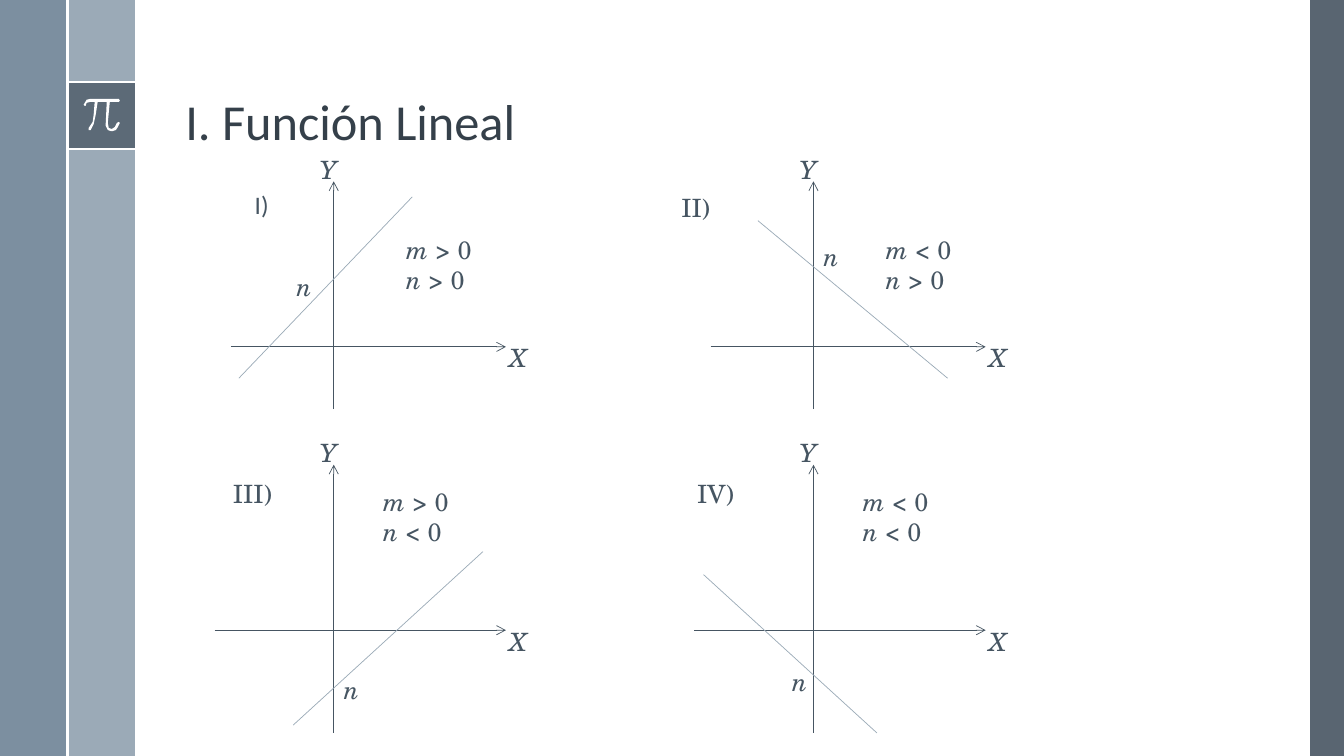
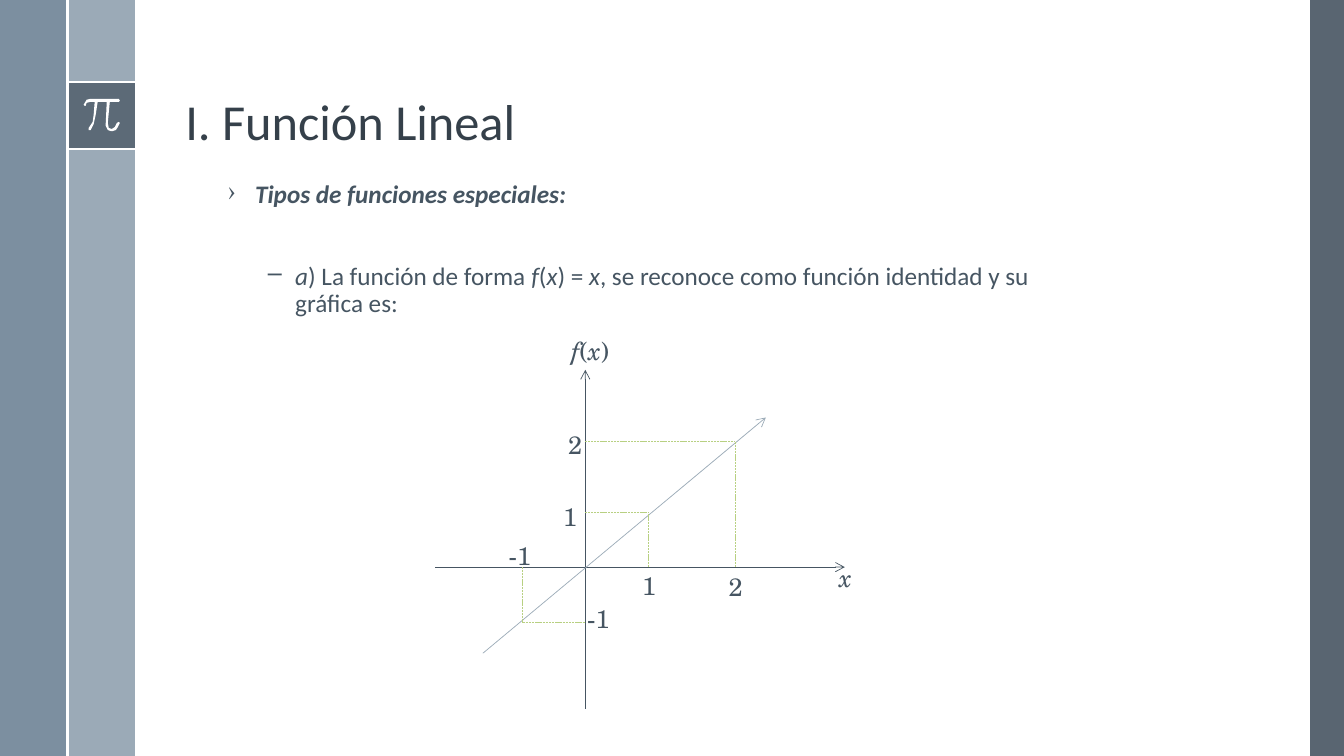
import pptx
import pptx.util
import pptx.dml.color
import pptx.enum.dml
import pptx.enum.shapes
import pptx.enum.text
import pptx.oxml.ns
import lxml.etree

Cm = pptx.util.Cm
Pt = pptx.util.Pt
RGBColor = pptx.dml.color.RGBColor
qn = pptx.oxml.ns.qn

WHITE = RGBColor(0xFF, 0xFF, 0xFF)
SLATE = RGBColor(0x47, 0x55, 0x62)
STEEL = RGBColor(0x6A, 0x80, 0x93)
MIST = RGBColor(0x9B, 0xAA, 0xB7)
INK = RGBColor(0x46, 0x55, 0x62)
TITLE_INK = RGBColor(0x35, 0x40, 0x4A)
GUIDE = RGBColor(0xB8, 0xD0, 0x82)

SANS = "Calibri"
SERIF = "TeX Gyre Schola"
WIDTH, HEIGHT = 33.87, 19.05
TITLE = "I. Función Lineal"

BANDS = [
    ((33.02, 0, 0.85, HEIGHT), SLATE, 90),
    ((1.7, 0, 1.7, HEIGHT), MIST, 100),
    ((0, 0, 1.7, HEIGHT), STEEL, 88),
    ((1.7, 2.06, 1.7, 1.7), SLATE, 75),
]
BAND_RULES = [
    ((1.7, 2.06), (3.4, 2.06)),
    ((1.7, 3.75), (3.4, 3.75)),
    ((1.7, 0), (1.7, HEIGHT)),
]
PI_UNIT = Cm(2.54) / 100
PI_OUTLINE = [
    (118, 98), (90, 98), (86.5, 99.3), (83.3, 103.5), (84, 105), (85, 105),
    (86.5, 102.5), (90, 101), (94, 101), (93, 113.6), (91.5, 121), (88, 127),
    (88, 129), (90, 129), (93, 123), (95, 114.3), (97, 101), (106, 101),
    (105, 122), (105, 125), (107, 129), (110, 130), (112, 130), (115, 129),
    (117.4, 126.4), (119, 122), (118, 121), (116, 122), (114.4, 126),
    (111, 128), (108, 127), (107, 122), (109, 101), (118, 101), (119, 100),
]

COLUMNS = [8.41, 20.5]
ROWS = [
    {"y": 8.74, "left": -2.59, "bottom": 1.57, "signs": (1.57, -2.97)},
    {"y": 15.88, "left": -3, "bottom": 2.59, "signs": (0.99, -3.76)},
]
AXIS_RIGHT, AXIS_TOP = 4.34, -4.17
CASES = [
    {"name": "I)", "font": SANS, "name_at": (-2.24, -4.09),
     "line": ((-2.39, 0.79), (1.98, -3.78)), "n_at": (-1.19, -2.03),
     "signs": ["*m* > 0", "*n* > 0"]},
    {"name": "II)", "font": SERIF, "name_at": (-3.58, -4.01),
     "line": ((-1.4, -3.18), (3.38, 0.79)), "n_at": (0, -2.79),
     "signs": ["*m* < 0", "*n* > 0"]},
    {"name": "III)", "font": SERIF, "name_at": (-2.79, -3.96),
     "line": ((-1.02, 2.39), (3.76, -1.98)), "n_at": (0, 0.99),
     "signs": ["*m* > 0", "*n* < 0"]},
    {"name": "IV)", "font": SERIF, "name_at": (-3.18, -3.96),
     "line": ((-2.77, -1.4), (1.6, 2.59)), "n_at": (-0.79, 0.79),
     "signs": ["*m* < 0", "*n* < 0"]},
]

HEADING = "Tipos de funciones especiales:"
STATEMENT = ("*a*) La función de forma *f*(*x*) = *x*, "
             "se reconoce como función identidad y su gráfica es:")
ORIGIN = (14.75, 14.29)
IDENTITY_LINES = [
    ((10.97, ORIGIN[1]), (21.29, ORIGIN[1]), INK),
    ((ORIGIN[0], 17.86), (ORIGIN[0], 9.32), INK),
    ((12.17, 16.46), (19.3, 10.52), MIST),
]
GUIDE_POINTS = [(16.33, 12.9), (18.52, 11.13), (13.16, 15.67)]
IDENTITY_LABELS = [
    ("1", 13.94, 12.5, 0.79),
    ("2", 14.07, 10.69, 0.86),
    ("1", 15.93, 14.25, 0.79),
    ("2", 18.11, 14.27, 0.99),
    ("-1", 14.55, 15.09, 1.19),
    ("-1", 12.57, 13.49, 1.19),
    ("*f*(*x*)", 14.15, 8.33, 1.98),
    ("*x*", 20.9, 14.05, 1.4),
]


def shift(origin, offset):
    return origin[0] + offset[0], origin[1] + offset[1]


def add_line(page, start, end, color, width=0.5, arrow=False, dashed=False):
    line = page.shapes.add_connector(
        pptx.enum.shapes.MSO_CONNECTOR.STRAIGHT,
        *(Cm(value) for value in (*start, *end)))
    line.line.color.rgb = color
    line.line.width = Pt(width)
    if dashed:
        line.line.dash_style = pptx.enum.dml.MSO_LINE.SQUARE_DOT
    properties = line._element.spPr
    if arrow:
        outline = properties.find(qn("a:ln"))
        lxml.etree.SubElement(outline, qn("a:tailEnd"), type="arrow")
    lxml.etree.SubElement(properties, qn("a:effectLst"))


def paint(shape, color, opacity=100):
    shape.shadow.inherit = False
    shape.fill.solid()
    shape.fill.fore_color.rgb = color
    shape.line.fill.background()
    if opacity < 100:
        tone = shape._element.spPr.find(qn("a:solidFill"))[0]
        lxml.etree.SubElement(tone, qn("a:alpha"), val=str(opacity * 1000))


def add_text(page, area, lines, font=SERIF, size=18, color=INK):
    box = page.shapes.add_textbox(*(Cm(value) for value in area))
    frame = box.text_frame
    frame.word_wrap = True
    for index, line in enumerate(lines):
        para = frame.paragraphs[0] if index == 0 else frame.add_paragraph()
        para.font.name = font
        para.font.size = Pt(size)
        para.font.color.rgb = color
        for position, piece in enumerate(line.split("*")):
            if piece:
                span = para.add_run()
                span.text = piece
                if position % 2:
                    span.font.italic = True
    return frame


def add_label(page, at, text, width=0.79, font=SERIF):
    add_text(page, (*at, width, 1.02), [text], font)


def set_bullet(para, symbol, margin, before):
    properties = para._p.get_or_add_pPr()
    properties.set("marL", str(Cm(margin)))
    properties.set("indent", str(Cm(-0.69)))
    bullet = lxml.etree.Element(qn("a:buChar"), char=symbol)
    properties.insert(0, bullet)
    para.line_spacing = 0.9
    para.space_before = Pt(before)


def add_page(deck):
    page = deck.slides.add_slide(deck.slide_layouts[6])
    for area, color, opacity in BANDS:
        band = page.shapes.add_shape(
            pptx.enum.shapes.MSO_SHAPE.RECTANGLE,
            *(Cm(value) for value in area))
        paint(band, color, opacity)
    for start, end in BAND_RULES:
        add_line(page, start, end, WHITE, 1.5)
    builder = page.shapes.build_freeform(*PI_OUTLINE[0], scale=PI_UNIT)
    builder.add_line_segments(PI_OUTLINE[1:], close=True)
    paint(builder.convert_to_shape(), WHITE)
    title = add_text(page, (4.42, 0.48, 27.18, 3.45), [TITLE],
                     SANS, 36, TITLE_INK)
    title.vertical_anchor = pptx.enum.text.MSO_ANCHOR.BOTTOM
    title.paragraphs[0].line_spacing = 0.9
    return page


def add_case(page, case, row, x):
    origin = (x, row["y"])
    add_line(page, shift(origin, (row["left"], 0)),
             shift(origin, (AXIS_RIGHT, 0)), INK, arrow=True)
    add_line(page, shift(origin, (0, row["bottom"])),
             shift(origin, (0, AXIS_TOP)), INK, arrow=True)
    start, end = case["line"]
    add_line(page, shift(origin, start), shift(origin, end), MIST)
    add_label(page, shift(origin, (4.17, -0.23)), "*X*")
    add_label(page, shift(origin, (-0.6, -4.98)), "*Y*", 0.58)
    add_label(page, shift(origin, case["n_at"]), "*n*", 0.58)
    add_label(page, shift(origin, case["name_at"]), case["name"],
              1.78, case["font"])
    add_text(page, (*shift(origin, row["signs"]), 2.59, 1.8), case["signs"])


def add_cases_page(deck):
    page = add_page(deck)
    for index, case in enumerate(CASES):
        row, column = divmod(index, len(COLUMNS))
        add_case(page, case, ROWS[row], COLUMNS[column])


def add_identity_page(deck):
    page = add_page(deck)
    body = add_text(page, (5.49, 4.45, 20.75, 13.54),
                    [HEADING, STATEMENT], SANS)
    heading, statement = body.paragraphs
    heading.font.bold = True
    heading.font.italic = True
    set_bullet(heading, "›", 0.69, 14)
    set_bullet(statement, "–", 1.7, 39)
    for start, end, color in IDENTITY_LINES:
        add_line(page, start, end, color, arrow=True)
    for x, y in GUIDE_POINTS:
        for foot in ((ORIGIN[0], y), (x, ORIGIN[1])):
            add_line(page, foot, (x, y), GUIDE, dashed=True)
    for text, x, y, width in IDENTITY_LABELS:
        add_label(page, (x, y), text, width)


def main():
    deck = pptx.Presentation()
    deck.slide_width = Cm(WIDTH)
    deck.slide_height = Cm(HEIGHT)
    add_cases_page(deck)
    add_identity_page(deck)
    deck.save("out.pptx")


if __name__ == "__main__":
    main()
